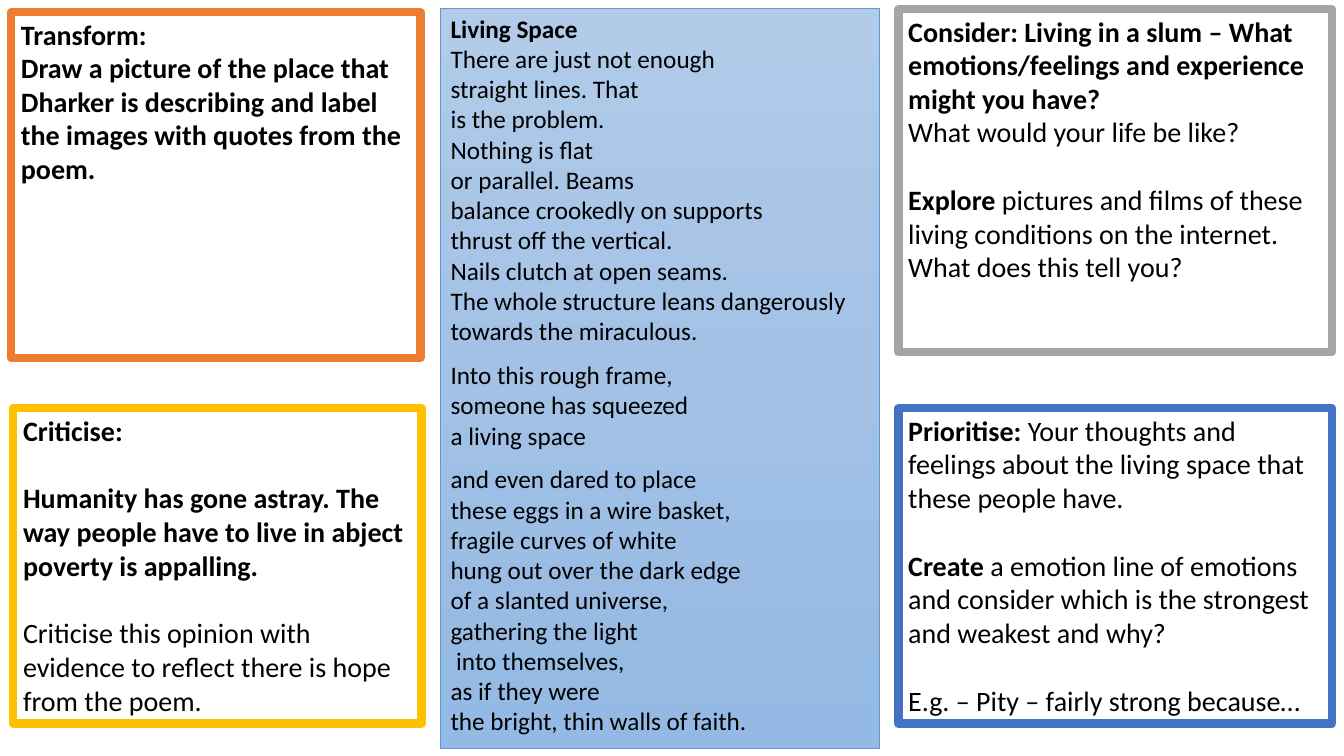
"""Build a poem study slide: the poem in the middle, four task boxes around it."""
from copy import deepcopy

from pptx import Presentation
from pptx.dml.color import RGBColor
from pptx.enum.shapes import MSO_SHAPE
from pptx.enum.text import MSO_ANCHOR, PP_ALIGN
from pptx.oxml.ns import qn
from pptx.util import Inches, Pt

FONT = "Calibri"
HUES = {
    "ink": "000000", "paper": "FFFFFF", "orange": "ED7D31", "grey": "A5A5A5",
    "gold": "FFC000", "blue": "4472C4", "edge": "5B9BD5",
    "light": "B1CBE9", "mid": "A3C1E5", "deep": "93B9E4",
}

# Each text is a list of stanzas; each line is a (bold, plain) pair.
TASKS = [
    ("orange", (0.11, 0.12, 4.06, 3.43), [[
        ("Transform:", ""),
        ("Draw a picture of the place that Dharker is describing and label "
         "the images with quotes from the poem.", ""),
    ]]),
    ("grey", (8.91, 0.09, 4.3, 3.4), [
        [("Consider: Living in a slum – What emotions/feelings and experience "
          "might you have?", ""),
         ("", "What would your life be like?")],
        [("Explore ", "pictures and films of these living conditions on the "
          "internet. What does this tell you?")],
    ]),
    ("gold", (0.13, 4.05, 4.05, 3.13), [
        [("Criticise:", "")],
        [("Humanity has gone astray. The way people have to live in abject "
          "poverty is appalling.", "")],
        [("", "Criticise this opinion with evidence to reflect there is hope "
          "from the poem.")],
    ]),
    ("blue", (8.91, 4.05, 4.3, 3.13), [
        [("Prioritise: ", "Your thoughts and feelings about the living space "
          "that these people have.")],
        [("Create", " a emotion line of emotions and consider which is the "
          "strongest and weakest and why?")],
        [("", "E.g. – Pity – fairly strong because…")],
    ]),
]
TITLE = "Living Space"
POEM = [
    ["There are just not enough", "straight lines. That", "is the problem.",
     "Nothing is flat", "or parallel. Beams", "balance crookedly on supports",
     "thrust off the vertical.", "Nails clutch at open seams.",
     "The whole structure leans dangerously", "towards the miraculous."],
    ["Into this rough frame,", "someone has squeezed", "a living space"],
    ["and even dared to place", "these eggs in a wire basket,",
     "fragile curves of white", "hung out over the dark edge",
     "of a slanted universe,", "gathering the light", " into themselves,",
     "as if they were", "the bright, thin walls of faith."],
]


def hue(name):
    return RGBColor.from_string(HUES[name])


def add_box(slide, area, edge, width):
    box = slide.shapes.add_shape(MSO_SHAPE.RECTANGLE, *map(Inches, area))
    box.shadow.inherit = False
    box.line.color.rgb = hue(edge)
    box.line.width = Pt(width)
    return box


def write(box, text, size, gap):
    frame = box.text_frame
    frame.word_wrap = True
    frame.vertical_anchor = MSO_ANCHOR.TOP
    lines = [(i > 0 and j == 0, pair)
             for i, group in enumerate(text) for j, pair in enumerate(group)]
    for i, (starts, pair) in enumerate(lines):
        para = frame.add_paragraph() if i else frame.paragraphs[0]
        para.alignment = PP_ALIGN.LEFT
        para.font.name, para.font.size = FONT, Pt(size)
        para.font.color.rgb = hue("ink")
        if starts:
            para.space_before = Pt(gap)
        for part, bold in zip(pair, (True, False)):
            if part:
                run = para.add_run()
                run.text, run.font.bold = part, bold


def shade(box, names):
    fill = box.fill
    fill.gradient()
    fill.gradient_angle = 270
    stops = box.element.spPr.find(qn("a:gradFill")).find(qn("a:gsLst"))
    stops.insert(1, deepcopy(stops[0]))
    for i, (stop, name) in enumerate(zip(fill.gradient_stops, names)):
        stop.color.rgb = hue(name)
        stop.position = i / (len(names) - 1)


def main():
    deck = Presentation()
    deck.slide_width, deck.slide_height = Inches(13.33), Inches(7.5)
    slide = deck.slides.add_slide(deck.slide_layouts[6])
    for edge, area, text in TASKS:
        box = add_box(slide, area, edge, 6)
        box.fill.solid()
        box.fill.fore_color.rgb = hue("paper")
        write(box, text, 20, 24.4)
    poem = add_box(slide, (4.37, 0.08, 4.35, 7.34), "edge", 0.5)
    shade(poem, ("light", "mid", "deep"))
    text = [[("", line) for line in group] for group in POEM]
    text[0].insert(0, (TITLE, ""))
    write(poem, text, 18, 9.8)
    deck.save("out.pptx")


if __name__ == "__main__":
    main()
